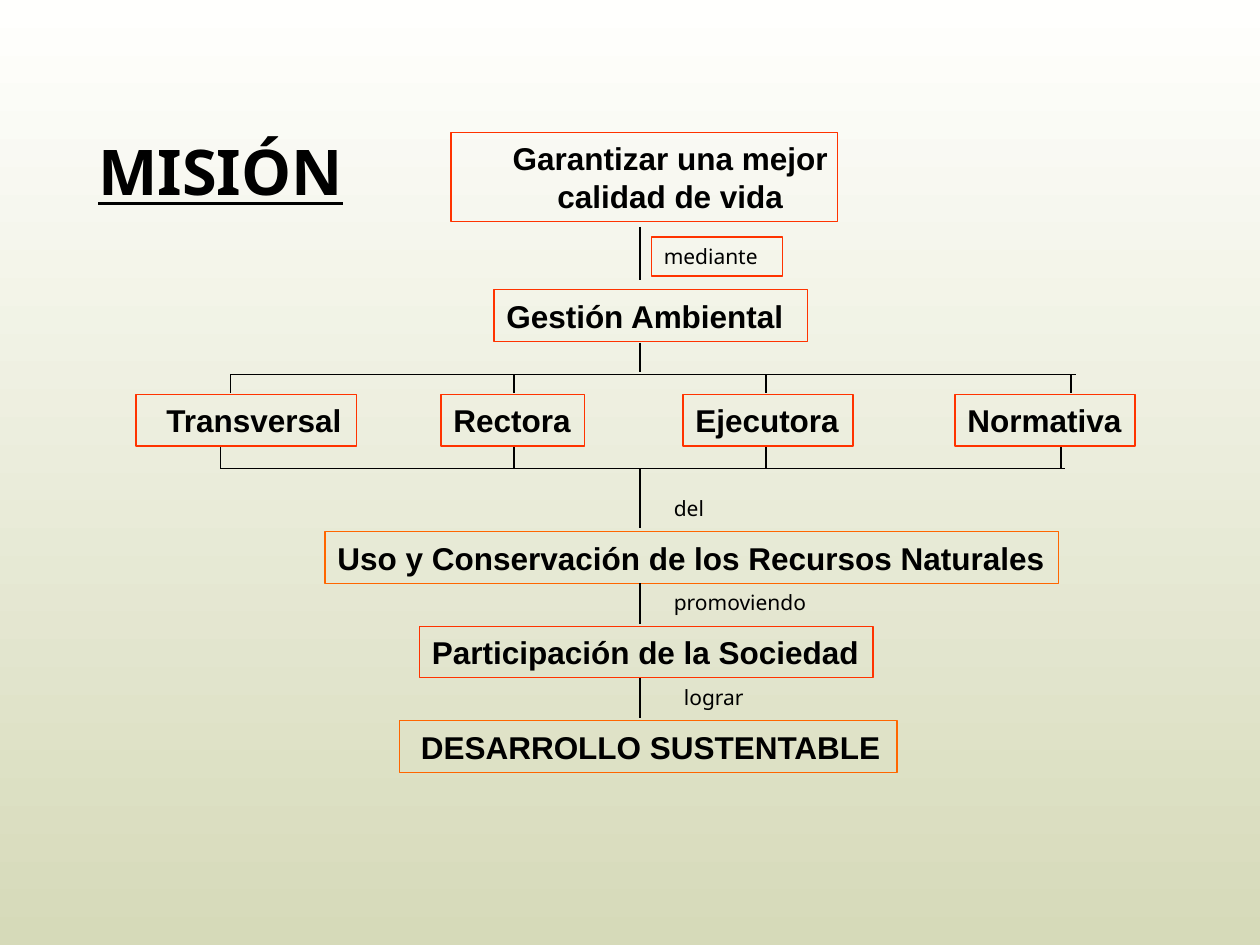
from lxml import etree
from pptx import Presentation
from pptx import util as u
from pptx.dml.color import RGBColor
from pptx.enum import shapes, text
from pptx.oxml.ns import qn

COLORS = {"top": "FFFFFD", "bottom": "D6DAB9", "ink": "000000",
          "red": "FF3300", "orange": "FF6600"}
Inches = u.Inches

deck = Presentation()
deck.slide_width, deck.slide_height = Inches(10), Inches(7.5)
slide = deck.slides.add_slide(deck.slide_layouts[5])

backdrop = slide.background.fill
backdrop.gradient()
backdrop.gradient_angle = 270
for stop, name, position in zip(backdrop.gradient_stops, ("top", "bottom"), (0, 1)):
    stop.color.rgb = RGBColor.from_string(COLORS[name])
    stop.position = position


def write(words, left, top, width, height, holder=None, border=None, font="Arial",
          size=18, bold=True, underline=False, align="LEFT", inset=0.1, right=0):
    if holder is None and border:
        holder = slide.shapes.add_shape(shapes.MSO_SHAPE.RECTANGLE, 0, 0, 0, 0)
        holder.shadow.inherit = False
        holder.fill.background()
        holder.line.color.rgb = RGBColor.from_string(COLORS[border])
        holder.line.width = u.Pt(0.75)
    elif holder is None:
        holder = slide.shapes.add_textbox(0, 0, 0, 0)
    holder.left, holder.top = Inches(left), Inches(top)
    holder.width, holder.height = Inches(width), Inches(height)
    frame = holder.text_frame
    frame.word_wrap = True
    frame.auto_size = text.MSO_AUTO_SIZE.NONE
    frame.vertical_anchor = text.MSO_ANCHOR.MIDDLE
    frame.margin_left, frame.margin_right = Inches(inset), Inches(right)
    frame.margin_top = frame.margin_bottom = Inches(0.05)
    frame.text = words
    paragraph = frame.paragraphs[0]
    paragraph.alignment = getattr(text.PP_ALIGN, align)
    style = paragraph.runs[0].font
    style.name, style.size = font, u.Pt(size)
    style.bold, style.underline = bold, underline
    style.color.rgb = RGBColor.from_string(COLORS["ink"])


def link(x1, y1, x2, y2):
    line = slide.shapes.add_connector(shapes.MSO_CONNECTOR.STRAIGHT,
                                      Inches(x1), Inches(y1), Inches(x2), Inches(y2))
    line.line.color.rgb = RGBColor.from_string(COLORS["ink"])
    line.line.width = u.Pt(0.75)
    etree.SubElement(line._element.spPr, qn("a:effectLst"))


write("MISIÓN", 0.41, 1, 2.68, 0.7, holder=slide.shapes.title, font="Noto Sans",
      size=36, underline=True, align="CENTER", right=0.1)
write("Garantizar una mejor calidad de vida", 3.58, 1.05, 3.07, 0.71,
      border="red", align="CENTER", inset=0.45, right=0.04)

for step, left, top, width, border, inset in [
    ("Gestión Ambiental", 3.92, 2.3, 2.49, "red", 0.1),
    ("Uso y Conservación de los Recursos Naturales", 2.58, 4.22, 5.82, "orange", 0.1),
    ("Participación de la Sociedad", 3.33, 4.97, 3.6, "red", 0.1),
    ("DESARROLLO SUSTENTABLE", 3.17, 5.72, 3.95, "orange", 0.17),
]:
    write(step, left, top, width, 0.41, border=border, inset=inset)

trunk, upper_bar, lower_bar = 5.08, 2.97, 3.72
for role, left, width, inset, above, below in [
    ("Transversal", 1.08, 1.75, 0.24, 1.83, 1.75),
    ("Rectora", 3.5, 1.14, 0.1, 4.08, 4.08),
    ("Ejecutora", 5.42, 1.35, 0.1, 6.08, 6.08),
    ("Normativa", 7.58, 1.43, 0.1, 8.5, 8.42),
]:
    write(role, left, 3.13, width, 0.41, border="red", inset=inset)
    link(above, upper_bar, above, 3.12)
    link(below, 3.55, below, lower_bar)

link(1.83, upper_bar, 8.54, upper_bar)
link(1.75, lower_bar, 8.45, lower_bar)
for start, end in [(1.8, 2.22), (2.72, 2.95), (lower_bar, 4.19), (4.63, 4.95), (5.38, 5.7)]:
    link(trunk, start, trunk, end)

for connective, left, top, width, height, border in [
    ("mediante", 5.17, 1.88, 1.04, 0.31, "red"),
    ("del", 5.25, 3.88, 0.46, 0.3, None),
    ("promoviendo", 5.25, 4.63, 1.37, 0.3, None),
    ("lograr", 5.33, 5.38, 0.76, 0.3, None),
]:
    write(connective, left, top, width, height, border=border,
          font="Noto Sans", size=12, bold=False)

deck.save("out.pptx")
